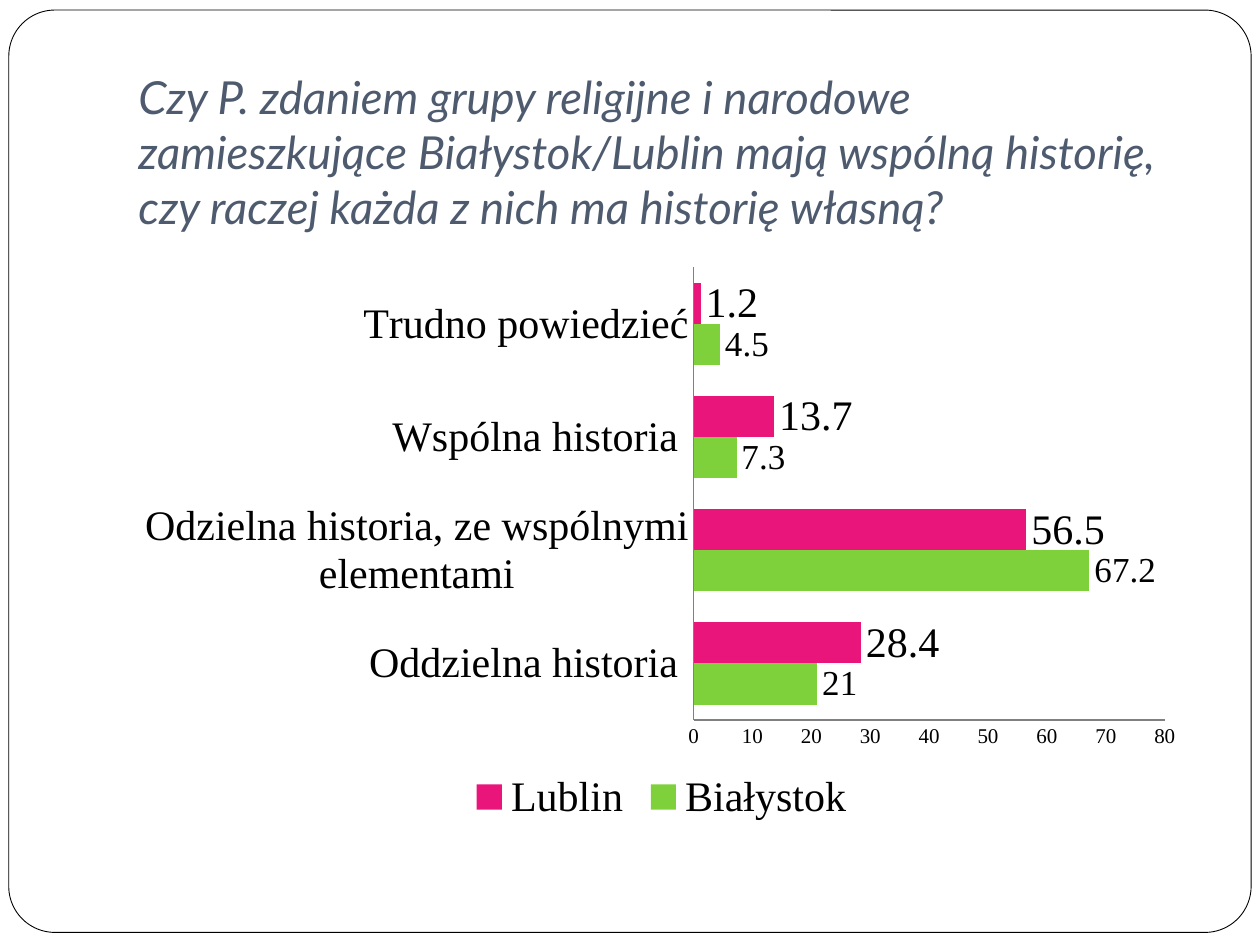
from lxml import etree
from pptx import Presentation
from pptx.chart.data import CategoryChartData
from pptx.dml.color import RGBColor
from pptx.enum.chart import XL_CHART_TYPE as ChartType, XL_LABEL_POSITION as LabelPosition
from pptx.enum.chart import XL_LEGEND_POSITION as LegendPosition, XL_TICK_MARK as TickMark
from pptx.enum.shapes import MSO_SHAPE as Shape
from pptx.enum.text import MSO_ANCHOR as Anchor
from pptx.oxml.ns import qn
from pptx.util import Inches, Pt

COLORS = {
    "paper": "FFFFFF",
    "ink": "000000",
    "title": "4E5B6F",
    "axis": "808080",
    "green": "7FD13B",
    "pink": "EA157A",
}
TITLE = (
    "Czy P. zdaniem grupy religijne i narodowe zamieszkujące Białystok/Lublin "
    "mają wspólną historię, czy raczej każda z nich ma historię własną?"
)
ANSWERS = [
    "Oddzielna historia ",
    "Odzielna historia, ze wspólnymi elementami",
    "Wspólna historia ",
    "Trudno powiedzieć",
]
CITIES = [
    {"name": "Białystok", "values": [21, 67.2, 7.3, 4.5], "color": "green", "size": 20},
    {"name": "Lublin", "values": [28.4, 56.5, 13.7, 1.2], "color": "pink", "size": 24},
]
PLOT_AREA = {"x": 0.53, "y": 0.02, "w": 0.44, "h": 0.79}


def color(name):
    return RGBColor.from_string(COLORS[name])


def style_font(font, size, name="Times New Roman", ink="ink", italic=False):
    font.name = name
    font.size = Pt(size)
    font.italic = italic
    font.color.rgb = color(ink)


def add_text(page, text, at, **style):
    box = page.shapes.add_textbox(*map(Inches, at))
    frame = box.text_frame
    frame.word_wrap = True
    frame.vertical_anchor = Anchor.BOTTOM
    frame.margin_bottom = Inches(0.1)
    span = frame.paragraphs[0].add_run()
    span.text = text
    style_font(span.font, **style)


def add_frame(page):
    frame = page.shapes.add_shape(
        Shape.ROUNDED_RECTANGLE, *map(Inches, (0.07, 0.08, 9.86, 7.32))
    )
    frame.adjustments[0] = 0.05
    frame.shadow.inherit = False
    frame.fill.solid()
    frame.fill.fore_color.rgb = color("paper")
    frame.line.color.rgb = color("ink")
    frame.line.width = Pt(0.5)


def place_plot(chart):
    plot_area = chart.plots[0]._element.getparent()
    for old in plot_area.findall(qn("c:layout")):
        plot_area.remove(old)
    layout = etree.Element(qn("c:layout"))
    manual = etree.SubElement(layout, qn("c:manualLayout"))
    settings = {"layoutTarget": "inner", "xMode": "edge", "yMode": "edge", **PLOT_AREA}
    for tag, value in settings.items():
        etree.SubElement(manual, qn(f"c:{tag}"), val=str(value))
    plot_area.insert(0, layout)


def add_history_chart(page):
    data = CategoryChartData()
    data.categories = ANSWERS
    for city in CITIES:
        data.add_series(city["name"], city["values"])
    chart = page.shapes.add_chart(
        ChartType.BAR_CLUSTERED, *map(Inches, (1, 2.03, 8.5, 4.55)), data
    ).chart
    chart.has_title = False
    style_font(chart.font, 10)

    for axis, size in ((chart.category_axis, 24), (chart.value_axis, 12)):
        axis.has_major_gridlines = False
        axis.major_tick_mark = axis.minor_tick_mark = TickMark.NONE
        axis.format.line.color.rgb = color("axis")
        style_font(axis.tick_labels.font, size)
    chart.value_axis.minimum_scale = 0
    chart.value_axis.maximum_scale = 80
    chart.value_axis.major_unit = 10

    plot = chart.plots[0]
    plot.gap_width = 75
    plot.overlap = 0
    plot.vary_by_categories = False
    for series, city in zip(plot.series, CITIES):
        series.format.fill.solid()
        series.format.fill.fore_color.rgb = color(city["color"])
        labels = series.data_labels
        labels.show_value = True
        labels.position = LabelPosition.OUTSIDE_END
        style_font(labels.font, city["size"])

    chart.has_legend = True
    chart.legend.position = LegendPosition.BOTTOM
    chart.legend.include_in_layout = False
    style_font(chart.legend.font, 24)
    place_plot(chart)


deck = Presentation()
deck.slide_width, deck.slide_height = Inches(10), Inches(7.5)
page = deck.slides.add_slide(deck.slide_layouts[6])
add_frame(page)
add_text(page, TITLE, (1, 0.3, 8.5, 1.65), size=26, name="Lato", ink="title", italic=True)
add_history_chart(page)
deck.save("out.pptx")
